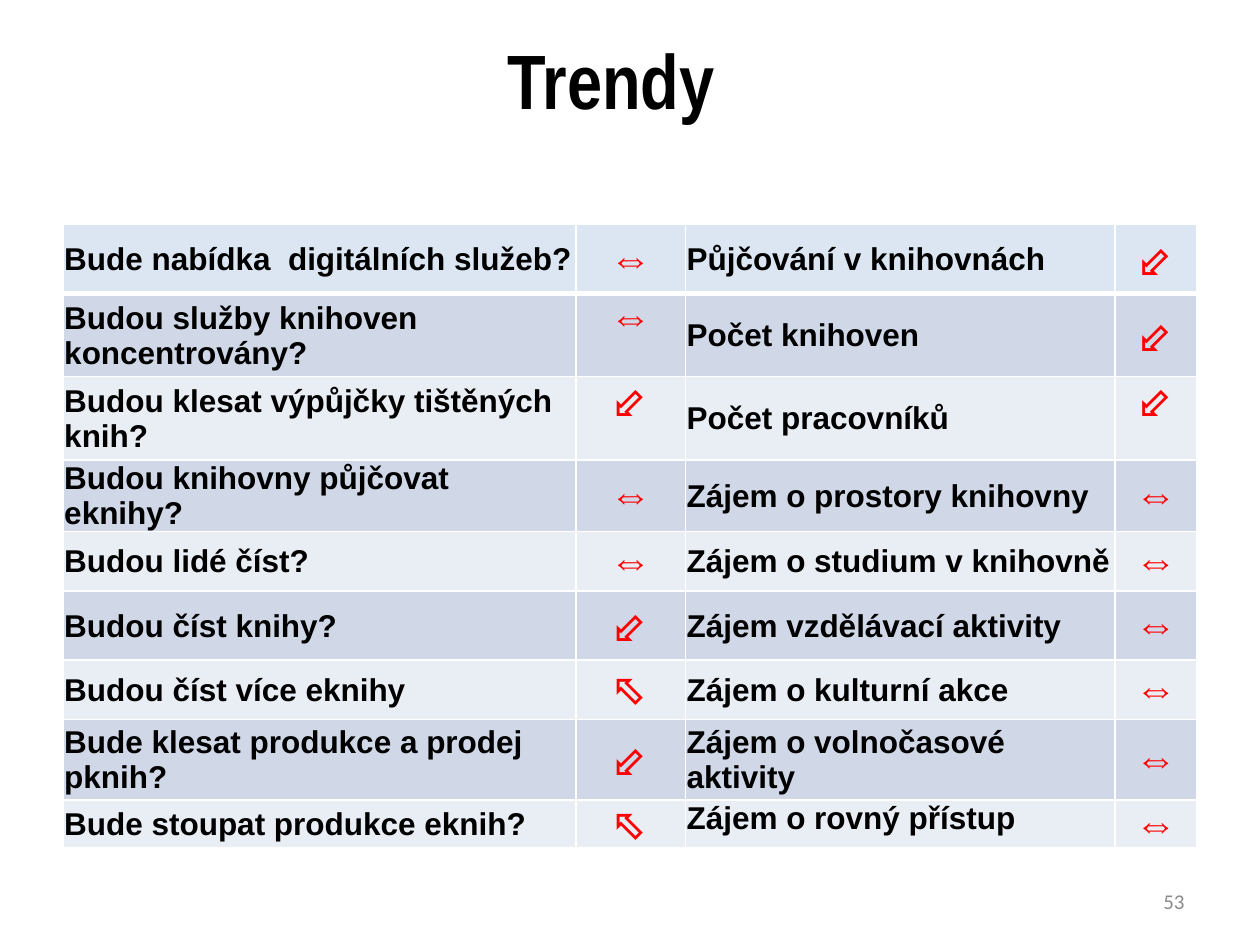
from dataclasses import dataclass

from lxml import etree
from pptx import Presentation
from pptx.dml.color import RGBColor
from pptx.enum.text import MSO_ANCHOR, PP_ALIGN
from pptx.oxml.ns import qn
from pptx.util import Inches, Pt

LEFT, CENTER, RIGHT = PP_ALIGN.LEFT, PP_ALIGN.CENTER, PP_ALIGN.RIGHT
TOP, MIDDLE = MSO_ANCHOR.TOP, MSO_ANCHOR.MIDDLE
TITLE_ONLY = 5


@dataclass(frozen=True)
class Theme:
    title_font: str = "Arial Narrow"
    body_font: str = "Arial"
    number_font: str = "Calibri"
    title_size: int = 44
    arrow_size: int = 24
    body_size: int = 18
    number_size: int = 12
    ink: str = "000000"
    arrow: str = "FF0000"
    number: str = "8C8C8C"
    border: str = "FFFFFF"
    header: str = "DCE6F2"
    bands: tuple = ("E9EDF4", "D0D8E8")


THEME = Theme()
SAME, DOWN, UP = "⇔", "⬃", "⬁"
COLUMN_WIDTHS = (4.07, 0.87, 3.41, 0.65)
TRENDS = (
    (0.55, "Bude nabídka  digitálních služeb?", SAME, "Půjčování v knihovnách", DOWN),
    (0.66, "Budou služby knihoven koncentrovány?", SAME, "Počet knihoven", DOWN),
    (0.66, "Budou klesat výpůjčky tištěných knih?", DOWN, "Počet pracovníků", DOWN),
    (0.57, "Budou knihovny půjčovat eknihy?", SAME, "Zájem o prostory knihovny", SAME),
    (0.47, "Budou lidé číst?", SAME, "Zájem o studium v knihovně", SAME),
    (0.55, "Budou číst knihy?", DOWN, "Zájem vzdělávací aktivity", SAME),
    (0.47, "Budou číst více eknihy", UP, "Zájem o kulturní akce", SAME),
    (0.64, "Bude klesat produkce a prodej pknih?", DOWN, "Zájem o volnočasové aktivity", SAME),
    (0.38, "Bude stoupat produkce eknih?", UP, "Zájem o rovný přístup", SAME),
)
TOP_ANCHORED = {(1, 1), (2, 1), (2, 3), (8, 2)}


def write(frame, text, font, size, color, align, bold=True):
    paragraph = frame.paragraphs[0]
    paragraph.alignment = align
    run = paragraph.add_run()
    run.text = text
    for name, value in {"name": font, "size": Pt(size), "bold": bold}.items():
        setattr(run.font, name, value)
    run.font.color.rgb = RGBColor.from_string(color)


def set_borders(cell, widths):
    """Draw the cell's sides; widths maps L, R, T and B, in that order, to points."""
    properties = cell._tc.get_or_add_tcPr()
    for side, width in widths.items():
        line = etree.SubElement(properties, qn(f"a:ln{side}"), w=str(Pt(width)))
        fill = etree.SubElement(line, qn("a:solidFill"))
        etree.SubElement(fill, qn("a:srgbClr"), val=THEME.border)


def add_title(slide, text):
    title = slide.shapes.title
    title.left, title.top = Inches(0.2), Inches(0)
    title.width, title.height = Inches(9.3), Inches(1.25)
    title.text_frame.vertical_anchor = MIDDLE
    write(title.text_frame, text, THEME.title_font, THEME.title_size, THEME.ink, CENTER)


def format_cell(cell, row, column, text):
    margins = {"margin_left": 0.01, "margin_right": 0.01, "margin_top": 0.01, "margin_bottom": 0}
    for name, value in margins.items():
        setattr(cell, name, Inches(value))
    cell.vertical_anchor = TOP if (row, column) in TOP_ANCHORED else MIDDLE
    if column % 2:
        style = (THEME.arrow_size, THEME.arrow, CENTER)
    else:
        style = (THEME.body_size, THEME.ink, LEFT)
    write(cell.text_frame, text, THEME.body_font, *style)
    set_borders(cell, {"L": 1, "R": 1, "T": 3 if row == 1 else 1, "B": 3 if row == 0 else 1})
    cell.fill.solid()
    color = THEME.bands[row % 2] if row else THEME.header
    cell.fill.fore_color.rgb = RGBColor.from_string(color)


def add_trend_table(slide):
    height = sum(trend[0] for trend in TRENDS)
    table = slide.shapes.add_table(
        len(TRENDS), len(COLUMN_WIDTHS), Inches(0.5), Inches(1.78),
        Inches(sum(COLUMN_WIDTHS)), Inches(height),
    ).table
    table.first_row = table.horz_banding = False
    for column, width in zip(table.columns, COLUMN_WIDTHS):
        column.width = Inches(width)
    for row, (row_height, *texts) in enumerate(TRENDS):
        table.rows[row].height = Inches(row_height)
        for column, text in enumerate(texts):
            format_cell(table.cell(row, column), row, column, text)


def add_slide_number(slide, text):
    box = slide.shapes.add_textbox(Inches(7.17), Inches(6.95), Inches(2.33), Inches(0.4))
    box.text_frame.word_wrap = True
    box.text_frame.vertical_anchor = MIDDLE
    write(box.text_frame, text, THEME.number_font, THEME.number_size, THEME.number, RIGHT, bold=False)


def main():
    deck = Presentation()
    deck.slide_width, deck.slide_height = Inches(10), Inches(7.5)
    slide = deck.slides.add_slide(deck.slide_layouts[TITLE_ONLY])
    add_title(slide, "Trendy")
    add_trend_table(slide)
    add_slide_number(slide, "53")
    deck.save("out.pptx")


if __name__ == "__main__":
    main()
